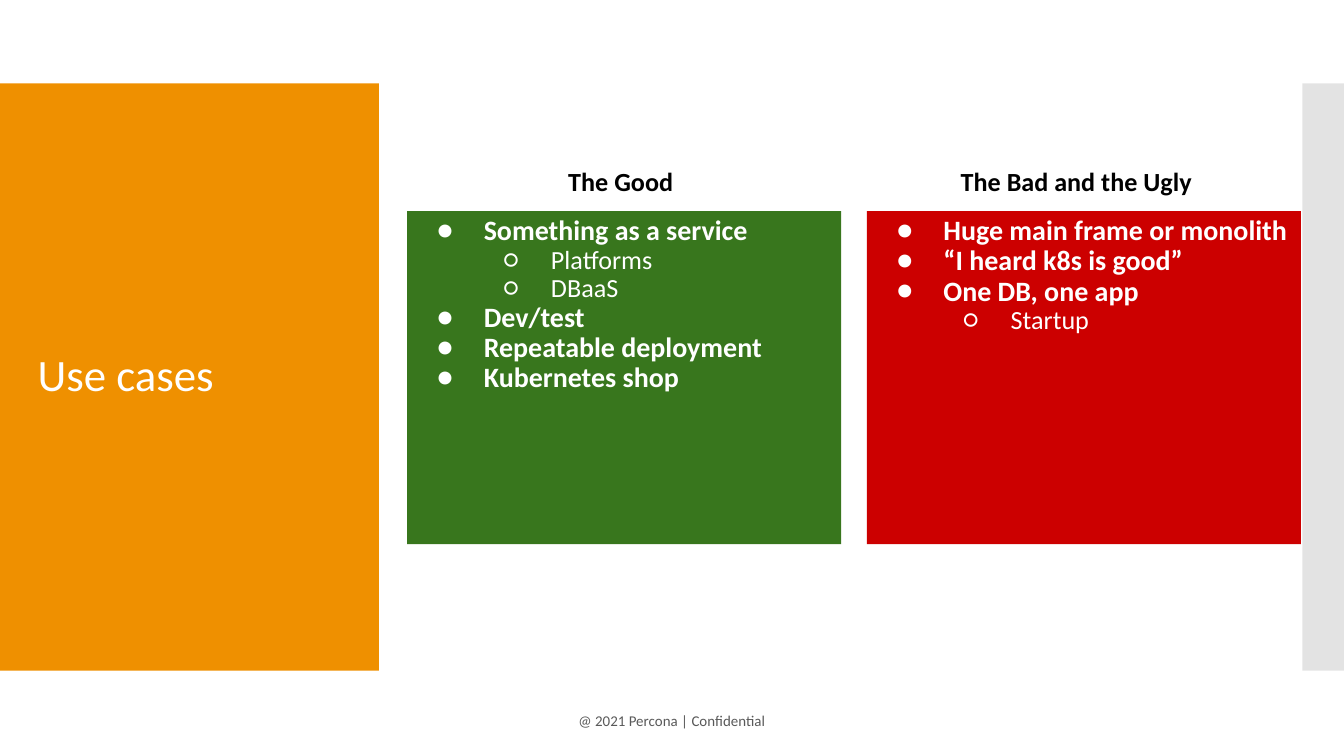
"""Build the use cases slide with its good and bad panels."""
from dataclasses import dataclass

from lxml.etree import SubElement
from pptx import Presentation
from pptx.dml.color import RGBColor
from pptx.enum.shapes import MSO_SHAPE
from pptx.enum.text import MSO_ANCHOR, PP_ALIGN
from pptx.oxml.ns import qn
from pptx.util import Inches, Pt


@dataclass(frozen=True)
class Theme:
    font: str = "Calibri"
    orange: str = "EF9000"
    grey: str = "C8C8C8"
    green: str = "38761D"
    red: str = "CC0000"
    white: str = "FFFFFF"
    black: str = "000000"
    muted: str = "595959"
    title: int = 24
    item: int = 15
    sub: int = 14
    footer: int = 8


@dataclass(frozen=True)
class Box:
    left: float
    top: float
    width: float
    height: float

    def emu(self) -> list:
        return [Inches(v) for v in (self.left, self.top, self.width, self.height)]


@dataclass(frozen=True)
class Panel:
    heading: str
    heading_left: float
    heading_width: float
    left: float
    color: str
    items: tuple


T = Theme()
BULLETS = ("●", "○")
PANELS = (
    Panel("The Good", 4.13, 1.03, 3.03, T.green, (
        (0, "Something as a service"), (1, "Platforms"), (1, "DBaaS"),
        (0, "Dev/test"), (0, "Repeatable deployment"), (0, "Kubernetes shop"))),
    Panel("The Bad and the Ugly", 7.05, 2.36, 6.45, T.red, (
        (0, "Huge main frame or monolith"), (0, "“I heard k8s is good”"),
        (0, "One DB, one app"), (1, "Startup"))),
)


def set_frame(tf, pad_x: float, pad_y: float, anchor=MSO_ANCHOR.TOP) -> None:
    fmt = {"word_wrap": True, "vertical_anchor": anchor,
           "margin_left": Inches(pad_x), "margin_right": Inches(pad_x),
           "margin_top": Inches(pad_y), "margin_bottom": Inches(pad_y)}
    for name, value in fmt.items():
        setattr(tf, name, value)


def write(p, text: str, size: int, color: str, bold: bool = False,
          align=PP_ALIGN.LEFT, spacing: float = 1.0) -> None:
    p.alignment, p.line_spacing = align, spacing
    r = p.add_run()
    r.text = text
    for name, value in {"name": T.font, "size": Pt(size), "bold": bold}.items():
        setattr(r.font, name, value)
    r.font.color.rgb = RGBColor.from_string(color)


def add_rect(s, box: Box, color: str):
    sp = s.shapes.add_shape(MSO_SHAPE.RECTANGLE, *box.emu())
    sp.shadow.inherit = False
    sp.fill.solid()
    sp.fill.fore_color.rgb = RGBColor.from_string(color)
    sp.line.fill.background()
    return sp


def add_text(s, box: Box, text: str, pads: tuple, anchor=MSO_ANCHOR.TOP, **fmt) -> None:
    tf = s.shapes.add_textbox(*box.emu()).text_frame
    set_frame(tf, *pads, anchor)
    write(tf.paragraphs[0], text, **fmt)


def add_bullet(p, level: int) -> None:
    p.level = level
    pPr = p._p.get_or_add_pPr()
    pPr.set("marL", str(Inches(0.5 * (level + 1))))
    pPr.set("indent", str(Inches(-0.35)))
    color = SubElement(pPr, qn("a:buClr"))
    SubElement(color, qn("a:srgbClr"), val=T.white)
    SubElement(pPr, qn("a:buFont"), typeface=T.font)
    SubElement(pPr, qn("a:buChar"), char=BULLETS[level])


def add_panel(s, panel: Panel) -> None:
    tf = add_rect(s, Box(panel.left, 1.57, 3.23, 2.48), panel.color).text_frame
    set_frame(tf, 0.07, 0.04)
    for i, (level, text) in enumerate(panel.items):
        p = tf.add_paragraph() if i else tf.paragraphs[0]
        add_bullet(p, level)
        write(p, text, T.sub if level else T.item, T.white, bold=level == 0, spacing=0.9)
    add_text(s, Box(panel.heading_left, 1.13, panel.heading_width, 0.44), panel.heading,
             (0.1, 0.1), size=T.sub, color=T.black, bold=True)


def main() -> None:
    prs = Presentation()
    prs.slide_width, prs.slide_height = Inches(10), Inches(10 * 9 / 16)
    s = prs.slides.add_slide(prs.slide_layouts[6])
    add_rect(s, Box(0, 0.62, 2.82, 4.37), T.orange)
    strip = add_rect(s, Box(9.69, 0.62, 0.31, 4.37), T.grey)
    strip_color = strip._element.spPr.find(qn("a:solidFill")).find(qn("a:srgbClr"))
    SubElement(strip_color, qn("a:alpha"), val="50000")
    add_text(s, Box(3.17, 5.25, 3.66, 0.22), "@ 2021 Percona | Confidential", (0.07, 0.07),
             MSO_ANCHOR.MIDDLE, size=T.footer, color=T.muted, align=PP_ALIGN.CENTER)
    add_text(s, Box(0.21, 0.92, 2.42, 3.77), "Use cases", (0.07, 0.04),
             MSO_ANCHOR.MIDDLE, size=T.title, color=T.white, spacing=0.9)
    for panel in PANELS:
        add_panel(s, panel)
    prs.save("out.pptx")


if __name__ == "__main__":
    main()
